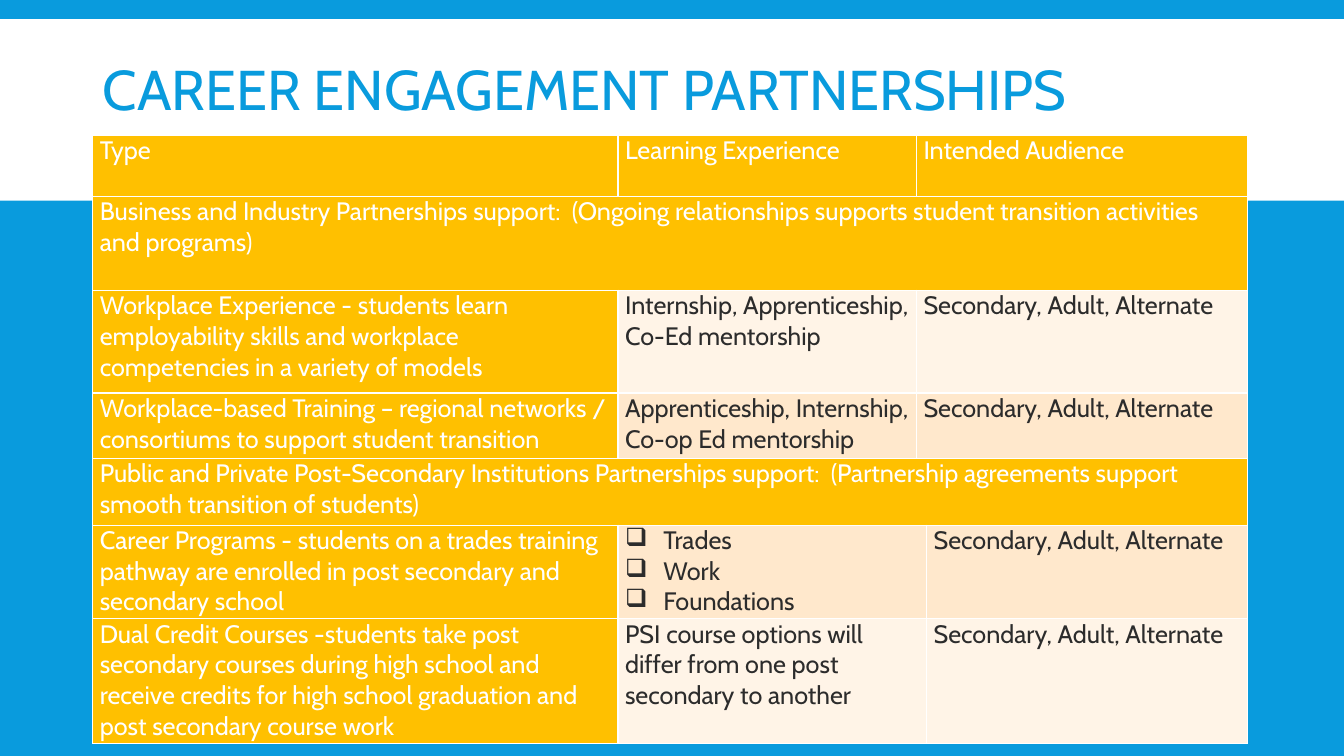
from dataclasses import dataclass

from lxml import etree
from pptx import Presentation
from pptx import util as u
from pptx.dml.color import RGBColor
from pptx.enum import shapes, text
from pptx.oxml.ns import qn


@dataclass(frozen=True)
class Theme:
    font: str = "Cabin"
    blue: str = "099BDD"
    white: str = "FFFFFF"
    gold: str = "FFC000"
    ink: str = "2C2C2C"
    pale: str = "FFF4E7"
    peach: str = "FFE8CC"
    title_size: int = 40
    body_size: int = 18
    border: float = 1


THEME = Theme()
COLUMNS = [5.21, 2.96, 0.1, 3.18]
AUDIENCE = "Secondary, Adult, Alternate"
BULLET = "❑"
BULLET_INDENT = 0.38

# Each row: height, fill after the first cell, then (column, span, wording)
ROWS = [
    (0.61, THEME.gold, [(0, 1, "Type"), (1, 1, "Learning Experience"),
                        (2, 2, "Intended Audience")]),
    (0.93, THEME.gold, [
        (0, 4, "Business and Industry Partnerships support:  (Ongoing relationships "
               "supports student transition activities and programs)")]),
    (1.02, THEME.pale, [
        (0, 1, "Workplace Experience - students learn employability skills and "
               "workplace competencies in a variety of models"),
        (1, 1, "Internship, Apprenticeship, Co-Ed mentorship"),
        (2, 2, AUDIENCE)]),
    (0.65, THEME.peach, [
        (0, 1, "Workplace-based Training – regional networks / consortiums to "
               "support student transition"),
        (1, 1, "Apprenticeship, Internship, Co-op Ed mentorship"),
        (2, 2, AUDIENCE)]),
    (0.66, THEME.gold, [
        (0, 4, "Public and Private Post-Secondary Institutions Partnerships support:  "
               "(Partnership agreements support smooth transition of students)")]),
    (0.93, THEME.peach, [
        (0, 1, "Career Programs - students on a trades training pathway are enrolled "
               "in post secondary and secondary school"),
        (1, 2, ["Trades", "Work", "Foundations"]),
        (3, 1, AUDIENCE)]),
    (1.24, THEME.pale, [
        (0, 1, "Dual Credit Courses -students take post secondary courses during high "
               "school and receive credits for high school graduation and post "
               "secondary course work"),
        (1, 2, "PSI course options will differ from one post secondary to another"),
        (3, 1, AUDIENCE)]),
]


class SlideBuilder:
    def __init__(self, deck, theme):
        self.theme = theme
        self.page = deck.slides.add_slide(deck.slide_layouts[5])
        self.paint(self.page.background.fill, theme.blue)

    def paint(self, fill, color):
        fill.solid()
        fill.fore_color.rgb = RGBColor.from_string(color)

    def format_text(self, frame, size, color):
        for para in frame.paragraphs:
            para.alignment = text.PP_ALIGN.LEFT
            for span in para.runs:
                span.font.name = self.theme.font
                span.font.size = u.Pt(size)
                span.font.color.rgb = RGBColor.from_string(color)

    def band(self, left, top, width, height):
        box = self.page.shapes.add_shape(
            shapes.MSO_SHAPE.RECTANGLE, *map(u.Inches, (left, top, width, height)))
        box.shadow.inherit = False
        self.paint(box.fill, self.theme.white)
        box.line.fill.background()
        self.page.shapes._spTree.insert(2, box._element)  # behind the title

    def title(self, wording, left, top, width, height):
        box = self.page.shapes.title
        box.left, box.top, box.width, box.height = map(
            u.Inches, (left, top, width, height))
        frame = box.text_frame
        frame.text = wording
        frame.auto_size = text.MSO_AUTO_SIZE.NONE
        frame.vertical_anchor = text.MSO_ANCHOR.MIDDLE
        frame.paragraphs[0].line_spacing = 0.85
        self.format_text(frame, self.theme.title_size, self.theme.blue)

    def table(self, columns, rows, left, top):
        heights = [height for height, _, _ in rows]
        table = self.page.shapes.add_table(
            len(rows), len(columns),
            *map(u.Inches, (left, top, sum(columns), sum(heights)))).table
        table.first_row = table.horz_banding = False
        for column, width in zip(table.columns, columns):
            column.width = u.Inches(width)
        for row, height in zip(table.rows, heights):
            row.height = u.Inches(height)
        for cell in table.iter_cells():
            self.borders(cell)
        for index, (_, tint, entries) in enumerate(rows):
            for column, span, wording in entries:
                cell = table.cell(index, column)
                if span > 1:
                    cell.merge(table.cell(index, column + span - 1))
                self.fill_cell(cell, wording, tint if column else self.theme.gold)

    def fill_cell(self, cell, wording, fill):
        self.paint(cell.fill, fill)
        cell.margin_left = cell.margin_right = u.Inches(0.07)
        cell.margin_top = cell.margin_bottom = 0
        frame = cell.text_frame
        bulleted = isinstance(wording, list)
        frame.text = "\n".join(wording) if bulleted else wording
        color = self.theme.white if fill == self.theme.gold else self.theme.ink
        self.format_text(frame, self.theme.body_size, color)
        if bulleted:
            for para in frame.paragraphs:
                self.bullet(para)

    def bullet(self, para):
        properties = para._p.get_or_add_pPr()
        indent = u.Inches(BULLET_INDENT)
        properties.set("marL", str(indent))
        properties.set("indent", str(-indent))
        etree.SubElement(properties, qn("a:buChar"), char=BULLET)

    def borders(self, cell):
        properties = cell._tc.get_or_add_tcPr()
        for side in ("lnL", "lnR", "lnT", "lnB"):
            line = etree.SubElement(properties, qn(f"a:{side}"),
                                    w=str(u.Pt(self.theme.border)))
            fill = etree.SubElement(line, qn("a:solidFill"))
            etree.SubElement(fill, qn("a:srgbClr"), val=self.theme.white)


def main():
    deck = Presentation()
    deck.slide_width, deck.slide_height = u.Inches(13.33), u.Inches(7.5)
    slide = SlideBuilder(deck, THEME)

    # Heading on its white band
    slide.band(0, 0.19, 13.33, 1.8)
    slide.title("CAREER ENGAGEMENT PARTNERSHIPS", 0.92, 0, 11.5, 1.85)

    # Partnership table
    slide.table(COLUMNS, ROWS, 0.92, 1.34)

    deck.save("out.pptx")


if __name__ == "__main__":
    main()
